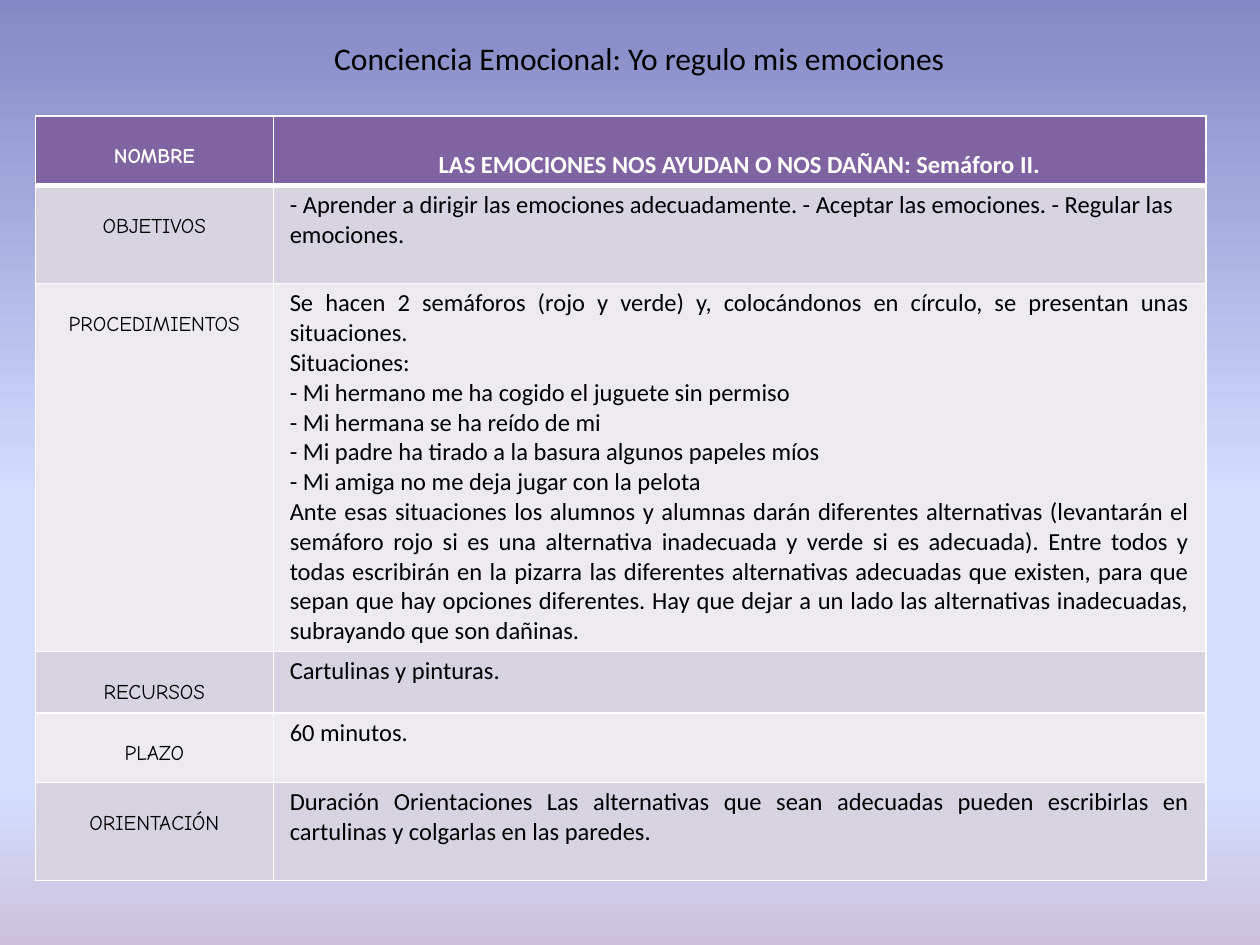
from dataclasses import dataclass

from lxml.etree import SubElement
from pptx import Presentation
from pptx.dml.color import RGBColor
from pptx.enum.text import MSO_ANCHOR, PP_ALIGN
from pptx.oxml.ns import qn
from pptx.util import Inches, Pt


@dataclass(frozen=True)
class Theme:
    body_font: str = "Calibri"
    label_font: str = "Comic Neue"
    title_size: int = 18
    body_size: int = 14
    label_size: int = 12
    ink: str = "000000"
    white: str = "FFFFFF"
    header: str = "8064A2"
    bands: tuple = ("D8D3E0", "EDEAF0")
    sky: tuple = ((0, "8488C4"), (53, "D4DEFF"), (83, "D4DEFF"), (100, "CCC1DA"))


THEME = Theme()
COLUMNS = (1.89, 7.4)
LEFT, CENTER, JUSTIFY = PP_ALIGN.LEFT, PP_ALIGN.CENTER, PP_ALIGN.JUSTIFY

# Row height, label, alignment of the content, content paragraphs
ROWS = (
    (0.55, "NOMBRE", CENTER, ("LAS EMOCIONES NOS AYUDAN O NOS DAÑAN: Semáforo II.",)),
    (0.78, "OBJETIVOS", LEFT, (
        "- Aprender a dirigir las emociones adecuadamente. - Aceptar las emociones. "
        "- Regular las emociones.",)),
    (2.92, "PROCEDIMIENTOS", JUSTIFY, (
        "Se hacen 2 semáforos (rojo y verde) y, colocándonos en círculo, se presentan "
        "unas situaciones.",
        "Situaciones:",
        "- Mi hermano me ha cogido el juguete sin permiso",
        "- Mi hermana se ha reído de mi",
        "- Mi padre ha tirado a la basura algunos papeles míos",
        "- Mi amiga no me deja jugar con la pelota",
        "Ante esas situaciones los alumnos y alumnas darán diferentes alternativas "
        "(levantarán el semáforo rojo si es una alternativa inadecuada y verde si es "
        "adecuada). Entre todos y todas escribirán en la pizarra las diferentes "
        "alternativas adecuadas que existen, para que sepan que hay opciones diferentes. "
        "Hay que dejar a un lado las alternativas inadecuadas, subrayando que son "
        "dañinas.")),
    (0.49, "RECURSOS", LEFT, ("Cartulinas y pinturas.",)),
    (0.55, "PLAZO", LEFT, ("60 minutos.",)),
    (0.78, "ORIENTACIÓN", JUSTIFY, (
        "Duración Orientaciones Las alternativas que sean adecuadas pueden escribirlas "
        "en cartulinas y colgarlas en las paredes.",)),
)


def style_paragraph(p, font, size, color, align, bold=False):
    p.alignment = align
    p.font.name = font
    p.font.size = Pt(size)
    p.font.bold = bold
    p.font.color.rgb = RGBColor.from_string(color)


def set_background(s):
    fill = s.background.fill
    fill.gradient()
    fill.gradient_angle = 270
    stops = next(s.element.iter(qn("a:gsLst")))
    for stop in list(stops):
        stops.remove(stop)
    for position, color in THEME.sky:
        stop = SubElement(stops, qn("a:gs"), pos=str(position * 1000))
        SubElement(stop, qn("a:srgbClr"), val=color)


def add_title(s, text):
    sp = s.shapes.title
    sp.left, sp.top, sp.width, sp.height = map(Inches, (2.32, 0.26, 5.51, 0.4))
    tf = sp.text_frame
    tf.text = text
    tf.word_wrap = True
    tf.vertical_anchor = MSO_ANCHOR.MIDDLE
    style_paragraph(tf.paragraphs[0], THEME.body_font, THEME.title_size, THEME.ink, CENTER)


def set_borders(cell, top, bottom):
    tc_pr = cell._tc.get_or_add_tcPr()
    for side, width in (("L", 1), ("R", 1), ("T", top), ("B", bottom)):
        line = SubElement(tc_pr, qn(f"a:ln{side}"), w=str(Pt(width)))
        fill = SubElement(line, qn("a:solidFill"))
        SubElement(fill, qn("a:srgbClr"), val=THEME.white)


def fill_cell(cell, paragraphs, row, top_margin, **style):
    # Borders come before the fill in the cell properties
    set_borders(cell, top=3 if row == 1 else 1, bottom=3 if row == 0 else 1)
    cell.fill.solid()
    color = THEME.bands[(row - 1) % 2] if row else THEME.header
    cell.fill.fore_color.rgb = RGBColor.from_string(color)
    cell.margin_left = cell.margin_right = Inches(0.13)
    cell.margin_top, cell.margin_bottom = Inches(top_margin), Inches(0.04)
    cell.vertical_anchor = MSO_ANCHOR.TOP
    tf = cell.text_frame
    tf.text = "\n".join(paragraphs)
    for p in tf.paragraphs:
        style_paragraph(p, color=THEME.ink if row else THEME.white, bold=row == 0, **style)


def add_activity_table(s):
    height = sum(row[0] for row in ROWS)
    table = s.shapes.add_table(len(ROWS), len(COLUMNS), Inches(0.28), Inches(0.92),
                               Inches(sum(COLUMNS)), Inches(height)).table
    for column, width in zip(table.columns, COLUMNS):
        column.width = Inches(width)
    for i, (row_height, label, align, paragraphs) in enumerate(ROWS):
        table.rows[i].height = Inches(row_height)
        fill_cell(table.cell(i, 0), (label,), i, 0.23,
                  font=THEME.label_font, size=THEME.label_size, align=CENTER)
        fill_cell(table.cell(i, 1), paragraphs, i, 0.04 if i else 0.27,
                  font=THEME.body_font, size=THEME.body_size, align=align)


def main():
    prs = Presentation()
    prs.slide_width, prs.slide_height = Inches(10), Inches(7.5)
    s = prs.slides.add_slide(prs.slide_layouts[5])
    set_background(s)
    add_activity_table(s)
    add_title(s, "Conciencia Emocional: Yo regulo mis emociones")
    prs.save("out.pptx")


if __name__ == "__main__":
    main()
